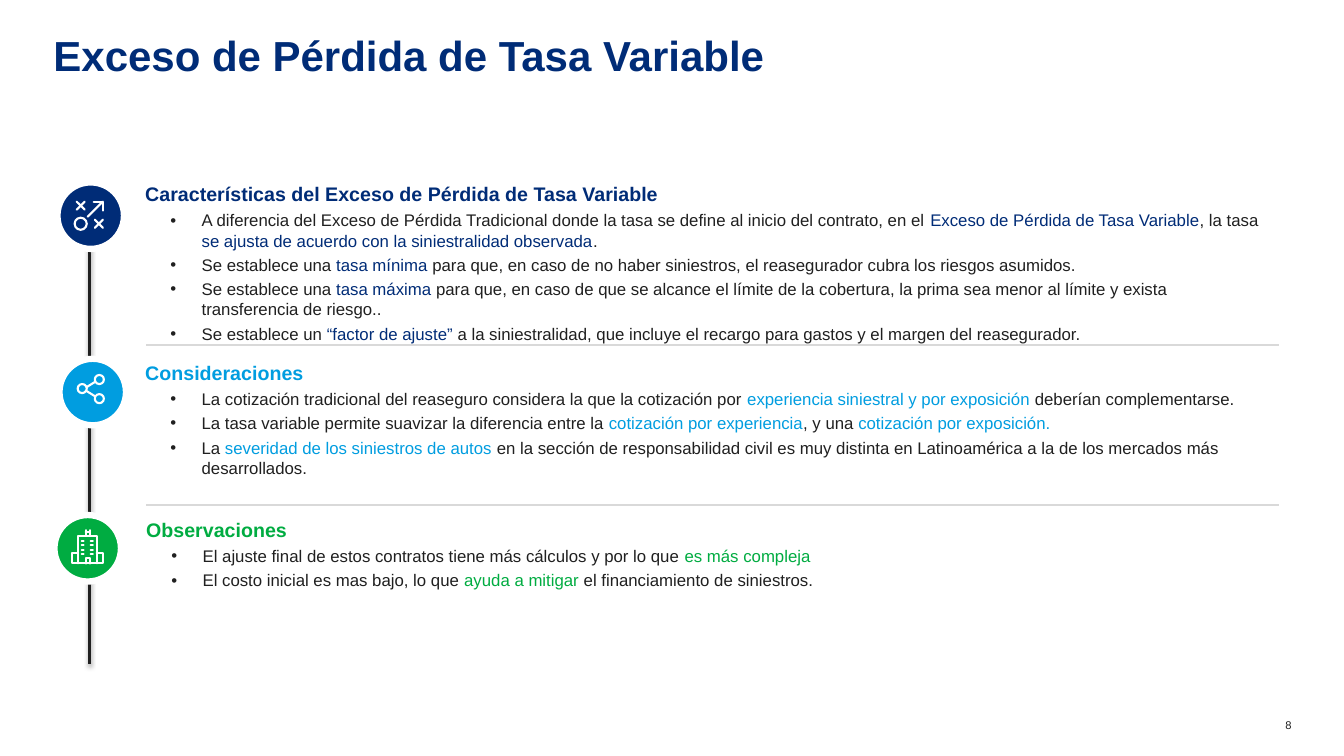
from dataclasses import dataclass
from lxml.etree import SubElement as Sub
from pptx import Presentation
from pptx.dml.color import RGBColor as Rgb
from pptx.enum.shapes import MSO_CONNECTOR as Link, MSO_SHAPE as Kind
from pptx.enum.text import MSO_ANCHOR as Anchor, MSO_AUTO_SIZE as Fit, PP_ALIGN as Align
from pptx.oxml.ns import qn
from pptx.util import Emu, Pt

SCALE = 9144  # EMU per px, 100 px to the inch
FONT = "Arial"
NAVY, SKY, GREEN = "002C77", "009DE0", "00AC41"
INK, RULE, WHITE = "202020", "D9D9D9", "FFFFFF"
DISC = 66

Box = tuple[int, int, int, int]
Point = tuple[int, int]


@dataclass
class Section:
    color: str
    box: Box
    disc: Point
    head: str
    items: list[str]  # accent words stand between bars
    strokes: list[list[Point]]
    rings: list[tuple[int, int, int]]  # left, top, size


def px(n: int) -> Emu:
    return Emu(n * SCALE)


def paint(target, color: str) -> None:
    target.rgb = Rgb.from_string(color)


def write(para, text: str, size: int, color: str, bold: bool = False) -> None:
    run = para.add_run()
    run.text = text
    run.font.name, run.font.size, run.font.bold = FONT, Pt(size), bold
    paint(run.font.color, color)


def reset(frame) -> None:
    frame.margin_left = frame.margin_right = frame.margin_top = frame.margin_bottom = 0
    frame.word_wrap = True
    frame.auto_size = Fit.NONE
    frame.vertical_anchor = Anchor.TOP


def add_text(slide, box: Box):
    frame = slide.shapes.add_textbox(*map(px, box)).text_frame
    reset(frame)
    return frame


def add_line(slide, start: Point, end: Point, color: str, width: float):
    line = slide.shapes.add_connector(Link.STRAIGHT, *map(px, start + end))
    paint(line.line.color, color) if line.line.fill.solid() is None else None
    line.line.width = Pt(width)
    return Sub(line._element.spPr, qn("a:effectLst"))


def add_disc(slide, left: int, top: int, size: int, fill: str | None, width: float) -> None:
    disc = slide.shapes.add_shape(Kind.OVAL, px(left), px(top), px(size), px(size))
    disc.shadow.inherit = False
    if fill:
        disc.fill.solid()
        paint(disc.fill.fore_color, fill)
    else:
        disc.fill.background()
    paint(disc.line.color, WHITE)
    disc.line.width = Pt(width)


def add_stroke(slide, points: list[Point]) -> None:
    pen = slide.shapes.build_freeform(*points[0], scale=SCALE)
    pen.add_line_segments(points[1:], close=False)
    path = pen.convert_to_shape()
    path.shadow.inherit = False
    path.fill.background()
    paint(path.line.color, WHITE)
    path.line.width = Pt(1.5)
    edge = path.line._get_or_add_ln()
    edge.set("cap", "rnd")
    Sub(edge, qn("a:round"))


def add_body(slide, part: Section) -> None:
    frame = add_text(slide, part.box)
    write(frame.paragraphs[0], part.head, 14, part.color, True)
    for item in part.items:
        para = frame.add_paragraph()
        para.level = 1
        para.space_before = Pt(3)
        props = para._p.get_or_add_pPr()
        props.set("marL", str(px(56)))
        props.set("indent", str(px(-31)))
        Sub(props, qn("a:buFont"), typeface=FONT)
        Sub(props, qn("a:buChar"), char="•")
        for i, text in enumerate(item.split("|")):
            if text:
                write(para, text, 12, part.color if i % 2 else INK)


def add_icon(slide, part: Section) -> None:
    add_disc(slide, *part.disc, DISC, part.color, 4.5)
    for points in part.strokes:
        add_stroke(slide, points)
    for ring in part.rings:
        add_disc(slide, *ring, None, 1.5)


def cross(left: int, top: int) -> list[list[Point]]:
    right, low = left + 8, top + 8
    return [[(left, top), (right, low)], [(left, low), (right, top)]]


# Icon strokes
PLAN = [[(93, 200), (102, 200), (102, 209)], [(87, 215), (102, 200)],
        *cross(76, 200), *cross(94, 218)]
SHARE = [[(86, 384), (94, 379)], [(86, 388), (94, 393)]]
TOWER = [
    [(77, 559), (77, 532), (96, 532), (96, 559)],
    [(77, 549), (71, 549), (71, 559), (102, 559), (102, 549), (96, 549)],
    [(85, 559), (85, 554), (89, 554), (89, 559)],
    [(85, 532), (85, 526)], [(89, 532), (89, 526)], [(85, 528), (89, 528)],
    *[[(x, y), (x + 2, y)] for y in (537, 541, 546, 550) for x in (81, 90)],
]

SECTIONS = [
    Section(NAVY, (144, 181, 1108, 130), (57, 181),
            "Características del Exceso de Pérdida de Tasa Variable", [
        "A diferencia del Exceso de Pérdida Tradicional donde la tasa se define al inicio del "
        "contrato, en el |Exceso de Pérdida de Tasa Variable|, la tasa |se ajusta de acuerdo "
        "con la siniestralidad observada|.",
        "Se establece una |tasa mínima |para que, en caso de no haber siniestros, el "
        "reasegurador cubra los riesgos asumidos.",
        "Se establece una |tasa máxima |para que, en caso de que se alcance el límite de la "
        "cobertura, la prima sea menor al límite y exista transferencia de riesgo..",
        "Se establece un |“factor de ajuste”| a la siniestralidad, que incluye el recargo "
        "para gastos y el margen del reasegurador.",
    ], PLAN, [(74, 216, 12)]),
    Section(SKY, (144, 358, 1162, 153), (59, 356), "Consideraciones", [
        "La cotización tradicional del reaseguro considera la que la cotización por "
        "|experiencia siniestral y por exposición |deberían complementarse.",
        "La tasa variable permite suavizar la diferencia entre la |cotización por "
        "experiencia|, y una |cotización por exposición.",
        "La |severidad de los siniestros de autos |en la sección de responsabilidad civil es "
        "muy distinta en Latinoamérica a la de los mercados más desarrollados.",
    ], SHARE, [(94, 372, 9), (77, 381, 9), (94, 391, 9)]),
    Section(GREEN, (145, 514, 1124, 147), (54, 511), "Observaciones", [
        "El ajuste final de estos contratos tiene más cálculos y por lo que |es más compleja",
        "El costo inicial es mas bajo, lo que |ayuda a mitigar| el financiamiento de siniestros.",
    ], TOWER, []),
]


def main() -> None:
    deck = Presentation()
    deck.slide_width, deck.slide_height = px(1333), px(750)
    slide = deck.slides.add_slide(deck.slide_layouts[5])

    # Title
    title = slide.shapes.title
    title.left, title.top, title.width, title.height = map(px, (53, 39, 1227, 54))
    reset(title.text_frame)
    para = title.text_frame.paragraphs[0]
    para.alignment, para.line_spacing = Align.LEFT, 0.8
    write(para, "Exceso de Pérdida de Tasa Variable", 30, NAVY, True)

    # Page number
    para = add_text(slide, (1250, 713, 31, 13)).paragraphs[0]
    para.alignment = Align.RIGHT
    write(para, "8", 8, INK)

    # Timeline with a soft shadow
    effects = add_line(slide, (89, 196), (89, 659), INK, 2)
    shade = Sub(effects, qn("a:outerShdw"), blurRad=str(Pt(3.1)), dist=str(Pt(1.6)),
                dir="5400000", rotWithShape="0")
    Sub(Sub(shade, qn("a:srgbClr"), val="000000"), qn("a:alpha"), val="38000")

    # Sections and the rules between them
    for part in SECTIONS:
        add_body(slide, part)
        add_icon(slide, part)
    for y in (342, 501):
        add_line(slide, (145, y), (1269, y), RULE, 1.5)

    deck.save("out.pptx")


if __name__ == "__main__":
    main()
